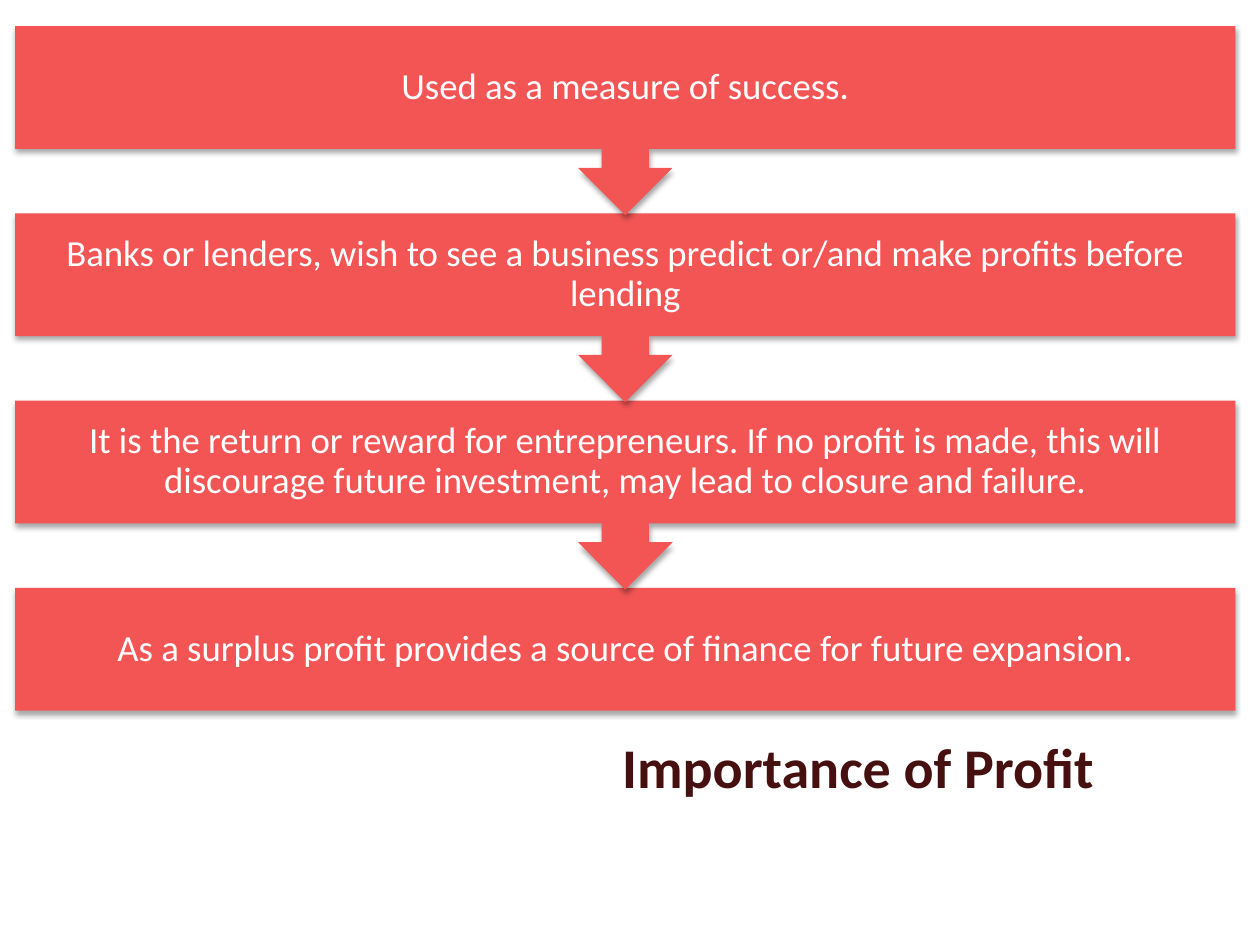
from dataclasses import dataclass

from lxml import etree
from pptx import Presentation
from pptx.dml.color import RGBColor
from pptx.enum.shapes import MSO_SHAPE
from pptx.enum.text import MSO_ANCHOR, PP_ALIGN
from pptx.oxml.ns import qn
from pptx.util import Pt

RECTANGLE = MSO_SHAPE.RECTANGLE
ARROW_BOX = MSO_SHAPE.DOWN_ARROW_CALLOUT
CENTER, LEFT = PP_ALIGN.CENTER, PP_ALIGN.LEFT
MIDDLE, BOTTOM = MSO_ANCHOR.MIDDLE, MSO_ANCHOR.BOTTOM


@dataclass(frozen=True)
class Theme:
    font: str = "Calibri"
    box_fill: RGBColor = RGBColor(0xF3, 0x55, 0x55)
    box_text: RGBColor = RGBColor(0xFF, 0xFF, 0xFF)
    title_text: RGBColor = RGBColor(0x46, 0x10, 0x10)
    box_size: float = 21
    title_size: float = 32


THEME = Theme()

REASONS = [
    "Used as a measure of success.",
    "Banks or lenders, wish to see a business predict or/and make profits before lending",
    "It is the return or reward for entrepreneurs. If no profit is made, this will "
    "discourage future investment, may lead to closure and failure.",
    "As a surplus profit provides a source of finance for future expansion.",
]


def set_all(target, values):
    for name, value in values.items():
        setattr(target, name, value)


def write(shape, text, frame_format, para_format, font_format, color):
    frame = shape.text_frame
    set_all(frame, {"word_wrap": True, **frame_format})
    para = frame.paragraphs[0]
    set_all(para, para_format)
    span = para.add_run()
    span.text = text
    set_all(span.font, {"name": THEME.font, **font_format})
    span.font.color.rgb = color


def add_soft_shadow(shape):
    shape.shadow.inherit = False
    effects = shape._element.spPr.find(qn("a:effectLst"))
    shadow = etree.SubElement(
        effects, qn("a:outerShdw"), blurRad=str(Pt(3.1)), dist=str(Pt(1.8)),
        dir="5400000", rotWithShape="0")
    black = etree.SubElement(shadow, qn("a:srgbClr"), val="000000")
    etree.SubElement(black, qn("a:alpha"), val="35000")


def add_reason(page, text, left, top, width, body_height, arrow_height):
    """One step of the flow; an arrow height of 0 gives a plain box."""
    height = body_height + arrow_height
    preset = ARROW_BOX if arrow_height else RECTANGLE
    box = page.shapes.add_shape(preset, Pt(left), Pt(top), Pt(width), Pt(height))
    if arrow_height:
        box.adjustments[3] = body_height / height
    box.fill.solid()
    box.fill.fore_color.rgb = THEME.box_fill
    box.line.fill.background()
    add_soft_shadow(box)
    margins = dict.fromkeys(
        ("margin_left", "margin_top", "margin_right", "margin_bottom"), Pt(11.8))
    write(box, text, {"vertical_anchor": MIDDLE, **margins},
          {"alignment": CENTER, "line_spacing": 0.9},
          {"size": Pt(THEME.box_size)}, THEME.box_text)


def add_flow(page, left, top, width, height):
    body_height, arrow_height = 70.2, 37.8
    last = len(REASONS) - 1
    pitch = (height - body_height) / last
    # Bottom step first, so that each arrow tip lies over the step below it
    for index in range(last, -1, -1):
        add_reason(page, REASONS[index], left, top + index * pitch, width,
                   body_height, arrow_height if index < last else 0)


def add_title(page, text, left, top, width, height):
    box = page.shapes.add_textbox(Pt(left), Pt(top), Pt(width), Pt(height))
    write(box, text, {"vertical_anchor": BOTTOM}, {"alignment": LEFT},
          {"size": Pt(THEME.title_size), "bold": True}, THEME.title_text)


def main():
    deck = Presentation()
    deck.slide_width, deck.slide_height = Pt(720), Pt(540)
    page = deck.slides.add_slide(deck.slide_layouts[6])
    add_title(page, "Importance of Profit", 348.5, 434.2, 311.8, 26.6)
    add_flow(page, 8.6, 14.9, 697.4, 391.2)
    deck.save("out.pptx")


if __name__ == "__main__":
    main()
